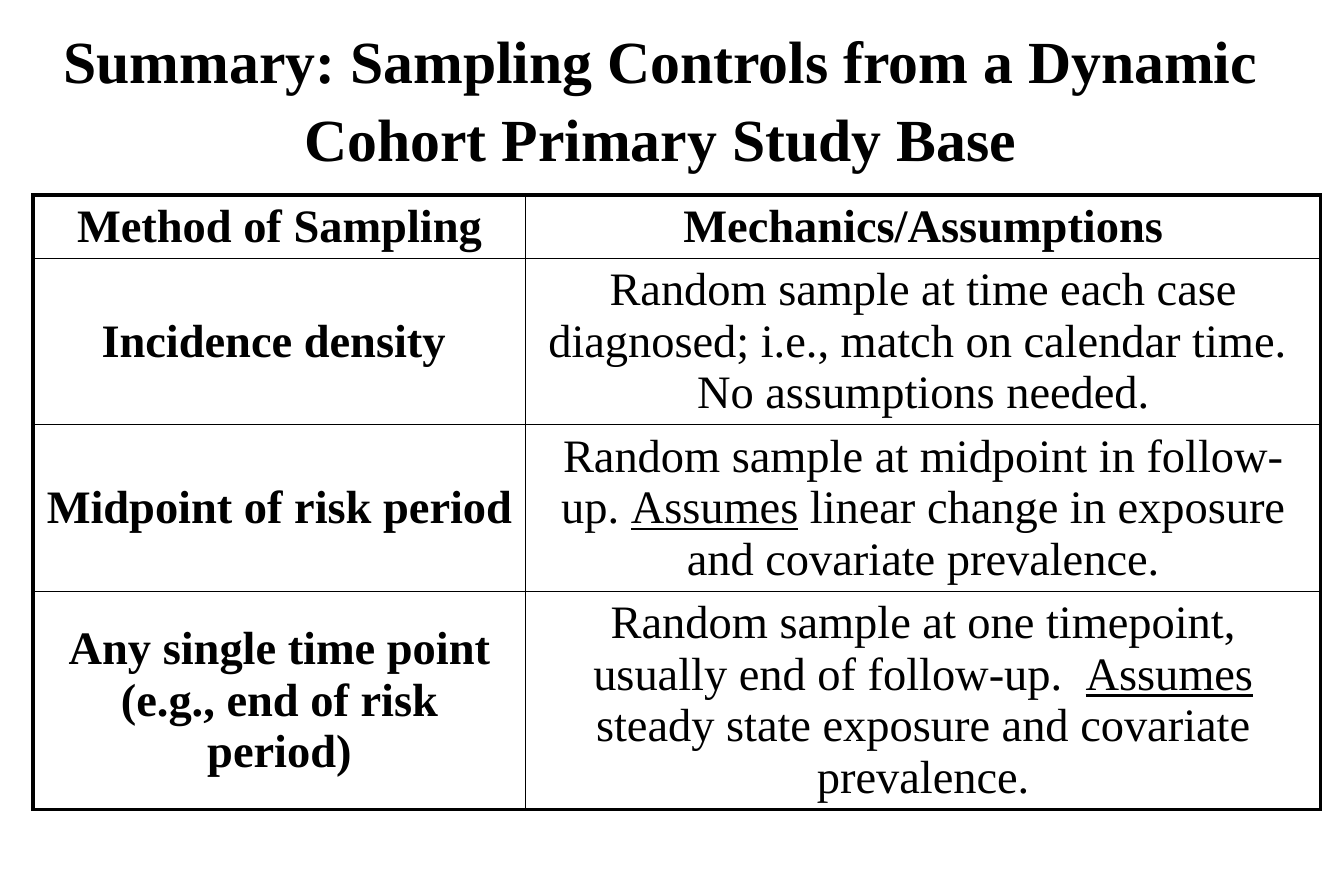
from lxml.etree import SubElement
from pptx import Presentation
from pptx.dml.color import RGBColor
from pptx.enum.text import MSO_ANCHOR as Anchor, MSO_AUTO_SIZE as Fit, PP_ALIGN as Align
from pptx.oxml.ns import qn
from pptx.util import Emu, Inches, Pt

TITLE = "Summary: Sampling Controls from a Dynamic Cohort Primary Study Base"
ROWS = [
    (["Method of Sampling"], ["Mechanics/Assumptions"]),
    (["Incidence density "],
     ["Random sample at time each case diagnosed; i.e., match on calendar time.  No assumptions needed."]),
    (["Midpoint of risk period"],
     ["Random sample at midpoint in follow-up. ", "Assumes",
      " linear change in exposure and covariate prevalence."]),
    (["Any single time point (e.g., end of risk period)"],
     ["Random sample at one timepoint, usually end of follow-up.  ", "Assumes",
      " steady state exposure and covariate prevalence."]),
]
WIDTHS = [493, 795]
HEIGHTS = [63, 166, 167, 217]
FONT = "Times New Roman"
BLACK = RGBColor(0, 0, 0)
THIN, THICK = Pt(1), Pt(2.25)


def px(n):
    return Emu(round(n * 914400 / 119.5))


def style(run, size, bold):
    run.font.name = FONT
    run.font.size = Pt(size)
    run.font.bold = bold
    run.font.color.rgb = BLACK


def edge(cell, side, width):
    line = SubElement(cell._tc.get_or_add_tcPr(), qn("a:ln" + side), w=str(width))
    fill = SubElement(line, qn("a:solidFill"))
    SubElement(fill, qn("a:srgbClr"), val=str(BLACK))


def fill_cell(cell, parts, row, col):
    end_row, end_col = len(ROWS) - 1, len(WIDTHS) - 1
    outer = {"L": col == 0, "R": col == end_col, "T": row == 0, "B": row == end_row}
    for side, thick in outer.items():
        edge(cell, side, THICK if thick else THIN)
    cell.fill.background()
    cell.margin_left = cell.margin_right = Inches(0.11)
    cell.margin_top = cell.margin_bottom = Inches(0.05)
    cell.vertical_anchor = Anchor.MIDDLE if row else Anchor.TOP
    para = cell.text_frame.paragraphs[0]
    para.alignment = Align.CENTER
    for part in parts:
        run = para.add_run()
        run.text = part
        style(run, 28, row == 0 or col == 0)
        if part == "Assumes":
            run.font.underline = True


def main():
    deck = Presentation()
    deck.slide_width, deck.slide_height = Inches(11.25), Inches(7.5)
    slide = deck.slides.add_slide(deck.slide_layouts[5])

    title = slide.shapes.title
    title.left, title.top, title.width, title.height = map(px, (33, 20, 1255, 150))
    frame = title.text_frame
    frame.text = TITLE
    frame.word_wrap = True
    frame.auto_size = Fit.NONE
    frame.vertical_anchor = Anchor.MIDDLE
    para = frame.paragraphs[0]
    para.alignment = Align.CENTER
    para.line_spacing = 1.09
    style(para.runs[0], 36, True)

    box = map(px, (33, 195, sum(WIDTHS), sum(HEIGHTS)))
    table = slide.shapes.add_table(len(ROWS), len(WIDTHS), *box).table
    table.first_row = table.horz_banding = False
    for col, width in enumerate(WIDTHS):
        table.columns[col].width = px(width)
    for row, height in enumerate(HEIGHTS):
        table.rows[row].height = px(height)
        for col, parts in enumerate(ROWS[row]):
            fill_cell(table.cell(row, col), parts, row, col)

    deck.save("out.pptx")


if __name__ == "__main__":
    main()
